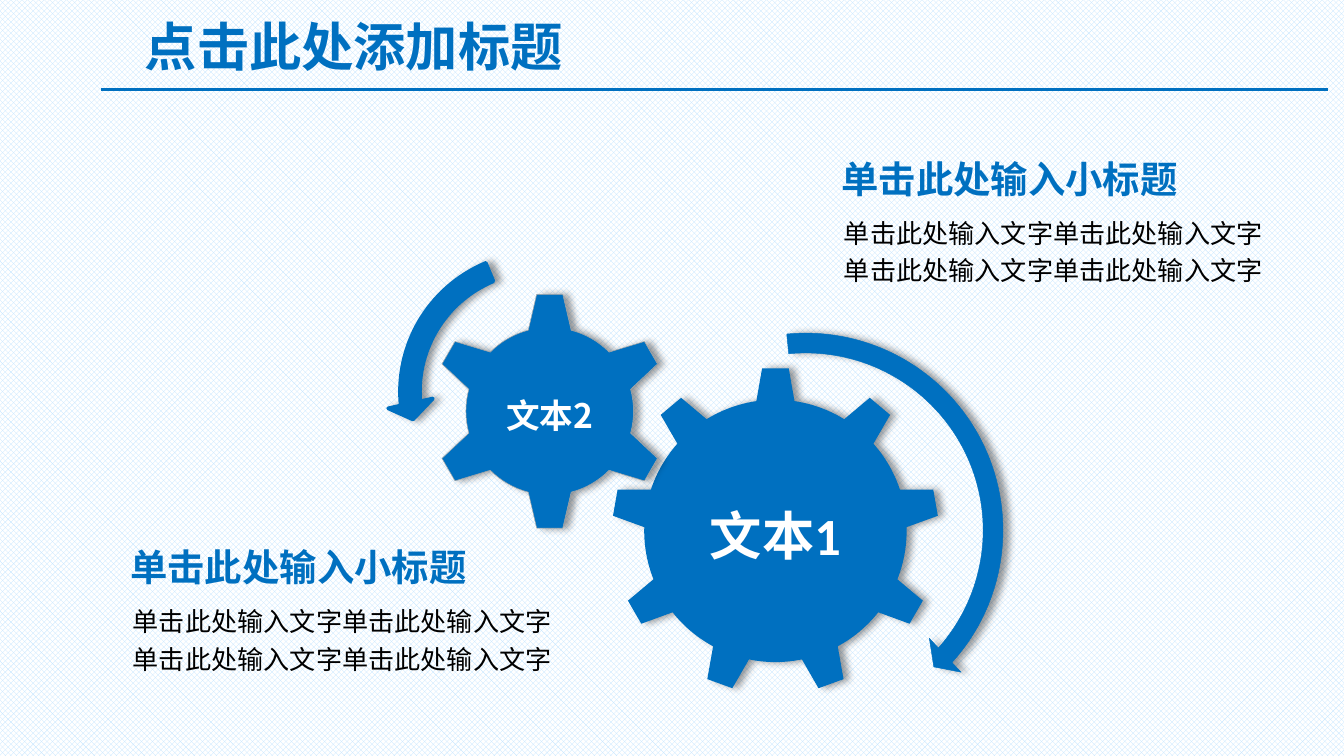
from dataclasses import dataclass
from typing import Optional

from lxml.etree import SubElement
from pptx import Presentation
from pptx.dml.color import RGBColor
from pptx.enum.dml import MSO_PATTERN
from pptx.enum.shapes import MSO_CONNECTOR, MSO_SHAPE
from pptx.enum.text import MSO_ANCHOR, MSO_AUTO_SIZE, PP_ALIGN
from pptx.oxml.ns import qn
from pptx.shapes.autoshape import Shape
from pptx.slide import Slide
from pptx.util import Pt

COLORS = {
    "blue": "0070C0",
    "pale": "BFE4FF",
    "white": "FFFFFF",
    "black": "000000",
    "gray": "A9A9A9",
}
CJK = "Noto Sans CJK SC"


@dataclass(frozen=True)
class Gear:
    preset: MSO_SHAPE
    left: float
    top: float
    side: float
    label: str
    size: float
    font: str
    outline: Optional[str] = None


@dataclass(frozen=True)
class Rotation:
    preset: MSO_SHAPE
    left: float
    top: float
    side: float
    bends: tuple[float, ...]
    outline_width: float


@dataclass(frozen=True)
class Caption:
    left: float
    top: float
    heading: str
    body: tuple[str, ...]


GEARS = (
    Gear(MSO_SHAPE.GEAR_9, 327.6, 196.6, 175.7, "文本1", 28, "Calibri"),
    Gear(MSO_SHAPE.GEAR_6, 230.4, 156.2, 128.2, "文本2", 18, CJK, "gray"),
)
ROTATIONS = (
    Rotation(MSO_SHAPE.CIRCULAR_ARROW, 319, 171.4, 225.4,
             (0.047, 2.99, 25.131, 158.679, 0.055), 0.25),
    Rotation(MSO_SHAPE.LEFT_CIRCULAR_ARROW, 207.4, 128.2, 163.4,
             (0.065, 4.3, 104.891, 148.378, 0.075), 2),
)
HEADING = "单击此处输入小标题"
BODY = ("单击此处输入文字单击此处输入文字",) * 2
CAPTIONS = (
    Caption(64.1, 287.3, HEADING, BODY),
    Caption(445, 79.2, HEADING, BODY),
)


def rgb(color: str) -> RGBColor:
    return RGBColor.from_string(COLORS[color])


def write(shape: Shape, *lines: str, size: float, color: str = "blue",
          font: str = CJK, bold: bool = False, align: PP_ALIGN = PP_ALIGN.LEFT,
          anchor: MSO_ANCHOR = MSO_ANCHOR.TOP, spacing: float = 1.0,
          inset: Optional[float] = None, grow: bool = False) -> None:
    frame = shape.text_frame
    frame.word_wrap = True
    frame.vertical_anchor = anchor
    if grow:
        frame.auto_size = MSO_AUTO_SIZE.SHAPE_TO_FIT_TEXT
    if inset is not None:
        frame.margin_left = frame.margin_right = Pt(inset)
        frame.margin_top = frame.margin_bottom = Pt(inset)
    for index, line in enumerate(lines):
        paragraph = frame.add_paragraph() if index else frame.paragraphs[0]
        paragraph.alignment = align
        paragraph.line_spacing = spacing
        run = paragraph.add_run()
        run.text = line
        run.font.size = Pt(size)
        run.font.bold = bold
        run.font.name = font
        run.font.color.rgb = rgb(color)
        SubElement(run.font._element, qn("a:ea"), typeface=CJK)


def add_box(slide: Slide, left: float, top: float, width: float, height: float) -> Shape:
    return slide.shapes.add_textbox(Pt(left), Pt(top), Pt(width), Pt(height))


def add_raised(slide: Slide, part: Gear | Rotation, outline: Optional[str],
               outline_width: float) -> Shape:
    shape = slide.shapes.add_shape(part.preset, Pt(part.left), Pt(part.top),
                                   Pt(part.side), Pt(part.side))
    shape.fill.solid()
    shape.fill.fore_color.rgb = rgb("blue")
    if outline:
        shape.line.color.rgb = rgb(outline)
        shape.line.width = Pt(outline_width)
    else:
        shape.line.fill.background()
    shape.shadow.inherit = False
    effects = shape._element.spPr.find(qn("a:effectLst"))
    shadow = SubElement(effects, qn("a:outerShdw"), blurRad=str(Pt(4)), dist=str(Pt(3)),
                        dir="0", algn="l", rotWithShape="0")
    tint = SubElement(shadow, qn("a:srgbClr"), val=COLORS["black"])
    SubElement(tint, qn("a:alpha"), val="40000")
    return shape


def add_gear(slide: Slide, gear: Gear) -> None:
    shape = add_raised(slide, gear, gear.outline, 0.25)
    write(shape, gear.label, size=gear.size, color="white", font=gear.font, bold=True,
          align=PP_ALIGN.CENTER, anchor=MSO_ANCHOR.MIDDLE, spacing=1.2)


def add_rotation(slide: Slide, rotation: Rotation) -> None:
    shape = add_raised(slide, rotation, "blue", rotation.outline_width)
    for index, bend in enumerate(rotation.bends):
        shape.adjustments[index] = bend


def add_caption(slide: Slide, caption: Caption) -> None:
    body = add_box(slide, caption.left, caption.top + 30.2, 256.3, 48.2)
    write(body, *caption.body, size=14, color="black", spacing=1.2, grow=True)
    heading = add_box(slide, caption.left + 5.7, caption.top, 196.6, 28)
    write(heading, caption.heading, size=20, bold=True, anchor=MSO_ANCHOR.MIDDLE,
          spacing=1.2, inset=0)


def add_title(slide: Slide, title: str) -> None:
    rule = slide.shapes.add_connector(MSO_CONNECTOR.STRAIGHT, Pt(54), Pt(48), Pt(711.4), Pt(48))
    rule.line.color.rgb = rgb("blue")
    rule.line.width = Pt(1.5)
    SubElement(rule._element.spPr, qn("a:effectLst"))
    write(add_box(slide, 70.6, 4.3, 648, 44.6), title, size=28, bold=True)


def main() -> None:
    deck = Presentation()
    deck.slide_width, deck.slide_height = Pt(720), Pt(405)
    slide = deck.slides.add_slide(deck.slide_layouts[6])
    backdrop = slide.background.fill
    backdrop.patterned()
    backdrop.pattern = MSO_PATTERN.TRELLIS
    backdrop.fore_color.rgb = rgb("pale")
    backdrop.back_color.rgb = rgb("white")
    add_title(slide, "点击此处添加标题")
    for gear in GEARS:
        add_gear(slide, gear)
    for rotation in ROTATIONS:
        add_rotation(slide, rotation)
    for caption in CAPTIONS:
        add_caption(slide, caption)
    deck.save("out.pptx")


if __name__ == "__main__":
    main()
